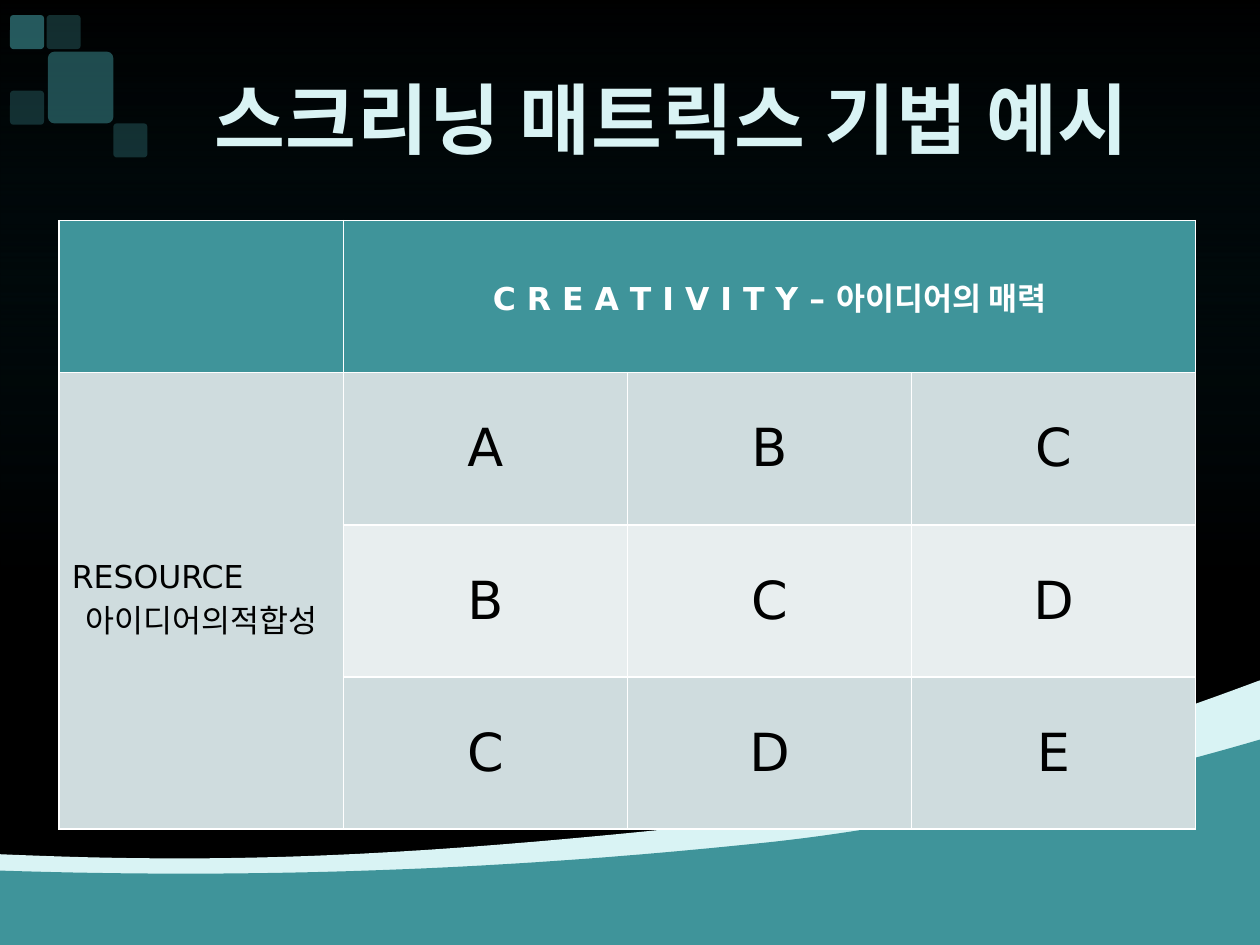
from dataclasses import dataclass

from lxml import etree
from pptx import Presentation
from pptx.dml.color import RGBColor
from pptx.enum.shapes import MSO_SHAPE
from pptx.enum.text import MSO_ANCHOR, PP_ALIGN
from pptx.oxml.ns import qn
from pptx.util import Inches, Pt

RECTANGLE = MSO_SHAPE.RECTANGLE
ROUNDED = MSO_SHAPE.ROUNDED_RECTANGLE
MIDDLE = MSO_ANCHOR.MIDDLE
LEFT, CENTER = PP_ALIGN.LEFT, PP_ALIGN.CENTER


@dataclass(frozen=True)
class Theme:
    black: str = "000000"
    white: str = "FFFFFF"
    glow: str = "005466"
    teal: str = "3F949A"
    pale: str = "D9F3F4"
    band_dark: str = "CFDCDE"
    band_light: str = "E8EEEF"
    title_font: str = "Cambria"
    body_font: str = "DejaVu Sans"
    title_size: int = 44
    label_size: int = 18
    grade_size: int = 30
    border_width: int = 1


def rgb(value):
    return RGBColor.from_string(value)


def write_text(frame, *lines, font, size, color, bold=False, aligns=(CENTER,), spacing=0):
    for index, line in enumerate(lines):
        paragraph = frame.paragraphs[0] if index == 0 else frame.add_paragraph()
        paragraph.alignment = aligns[index]
        run = paragraph.add_run()
        run.text = line
        run.font.name = font
        run.font.size = Pt(size)
        run.font.bold = bold
        run.font.color.rgb = rgb(color)
        if spacing:
            run.font._element.set("spc", str(spacing))


def set_opacity(fill_xml, percents):
    for color, percent in zip(fill_xml.iter(qn("a:srgbClr")), percents):
        etree.SubElement(color, qn("a:alpha"), val=str(percent * 1000))


def curve_points(start, segments, steps=40):
    points = [start]
    for first, second, end in segments:
        origin = points[-1]
        for step in range(1, steps + 1):
            t = step / steps
            weights = ((1 - t) ** 3, 3 * t * (1 - t) ** 2, 3 * t**2 * (1 - t), t**3)
            anchors = (origin, first, second, end)
            points.append(tuple(sum(w * a[axis] for w, a in zip(weights, anchors)) for axis in (0, 1)))
    return points


class SlideBuilder:
    def __init__(self, slide, theme):
        self.slide = slide
        self.theme = theme

    def background(self):
        fill = self.slide.background.fill
        fill.solid()
        fill.fore_color.rgb = rgb(self.theme.black)

    def shade(self, width, height):
        shade = self.slide.shapes.add_shape(RECTANGLE, 0, 0, width, height)
        shade.shadow.inherit = False
        shade.line.fill.background()
        shade.fill.gradient()
        shade.fill.gradient_angle = 270
        stops = ((0, self.theme.glow), (0.61, self.theme.black))
        for stop, (position, color) in zip(shade.fill.gradient_stops, stops):
            stop.position = position
            stop.color.rgb = rgb(color)
        set_opacity(shade._element.spPr.find(qn("a:gradFill")), (0, 40))

    def wave(self, start, segments, color):
        outline = curve_points(start, segments) + [(10, 7.5), (0, 7.5)]
        corners = [(Inches(x), Inches(y)) for x, y in outline]
        builder = self.slide.shapes.build_freeform(*corners[0])
        builder.add_line_segments(corners[1:], close=True)
        self.paint(builder.convert_to_shape(), color)

    def tile(self, left, top, width, height, opacity):
        tile = self.slide.shapes.add_shape(
            ROUNDED, Inches(left), Inches(top), Inches(width), Inches(height)
        )
        tile.adjustments[0] = 0.1
        self.paint(tile, self.theme.teal)
        set_opacity(tile._element.spPr.find(qn("a:solidFill")), (opacity,))

    def paint(self, shape, color):
        shape.shadow.inherit = False
        shape.fill.solid()
        shape.fill.fore_color.rgb = rgb(color)
        shape.line.fill.background()

    def title(self, text):
        title = self.slide.shapes.title
        title.left, title.top = Inches(1.25), Inches(0.39)
        title.width, title.height = Inches(8.17), Inches(1.09)
        title.text_frame.word_wrap = True
        title.text_frame.vertical_anchor = MIDDLE
        write_text(title.text_frame, text, font=self.theme.title_font, size=self.theme.title_size,
                   color=self.theme.pale, bold=True, spacing=50)
        self.slide.shapes._spTree.append(title._element)

    def style_cell(self, cell, color):
        cell.vertical_anchor = MIDDLE
        properties = cell._tc.get_or_add_tcPr()
        for side in ("a:lnL", "a:lnR", "a:lnT", "a:lnB"):
            border = etree.SubElement(properties, qn(side), w=str(Pt(self.theme.border_width)))
            border_fill = etree.SubElement(border, qn("a:solidFill"))
            etree.SubElement(border_fill, qn("a:srgbClr"), val=self.theme.white)
        cell.fill.solid()
        cell.fill.fore_color.rgb = rgb(color)

    def matrix(self, attraction, fitness, grades):
        theme = self.theme
        size = len(grades) + 1
        table = self.slide.shapes.add_table(
            size, size, Inches(0.47), Inches(1.75), Inches(9.02), Inches(4.83)
        ).table
        row_colors = [theme.teal] + [
            theme.band_light if row % 2 else theme.band_dark for row in range(len(grades))
        ]
        for row, color in enumerate(row_colors):
            for column in range(size):
                self.style_cell(table.cell(row, column), color)
        table.cell(0, 1).merge(table.cell(0, size - 1))
        table.cell(1, 0).merge(table.cell(size - 1, 0))
        write_text(table.cell(0, 1).text_frame, attraction, font=theme.body_font,
                   size=theme.label_size, color=theme.white, bold=True)
        write_text(table.cell(1, 0).text_frame, *fitness, font=theme.body_font,
                   size=theme.label_size, color=theme.black, aligns=(LEFT, CENTER))
        for row, row_grades in enumerate(grades, 1):
            for column, grade in enumerate(row_grades, 1):
                write_text(table.cell(row, column).text_frame, grade, font=theme.body_font,
                           size=theme.grade_size, color=theme.black)


def main():
    presentation = Presentation()
    presentation.slide_width, presentation.slide_height = Inches(10), Inches(7.5)
    theme = Theme()
    builder = SlideBuilder(presentation.slides.add_slide(presentation.slide_layouts[5]), theme)

    builder.background()
    builder.shade(presentation.slide_width, presentation.slide_height)
    builder.wave(
        (0, 6.78),
        [((1.61, 6.85), (2.93, 6.82), (5.21, 6.59)), ((7.49, 6.36), (9.48, 5.59), (10, 5.4))],
        theme.pale,
    )
    builder.wave(
        (0, 6.91),
        [((2.46, 6.99), (4.45, 6.86), (6.15, 6.68)), ((7.84, 6.49), (9.59, 5.99), (10, 5.87))],
        theme.teal,
    )
    for left, top, opacity in ((0.37, 0.12, 30), (0.08, 0.72, 30), (0.08, 0.12, 60), (0.9, 0.98, 30)):
        builder.tile(left, top, 0.27, 0.27, opacity)
    builder.tile(0.38, 0.41, 0.52, 0.57, 50)

    builder.matrix("C R E A T I V I T Y – 아이디어의 매력", ("RESOURCE", "아이디어의적합성"),
                   ("ABC", "BCD", "CDE"))
    builder.title("스크리닝 매트릭스 기법 예시")
    presentation.save("out.pptx")


if __name__ == "__main__":
    main()
